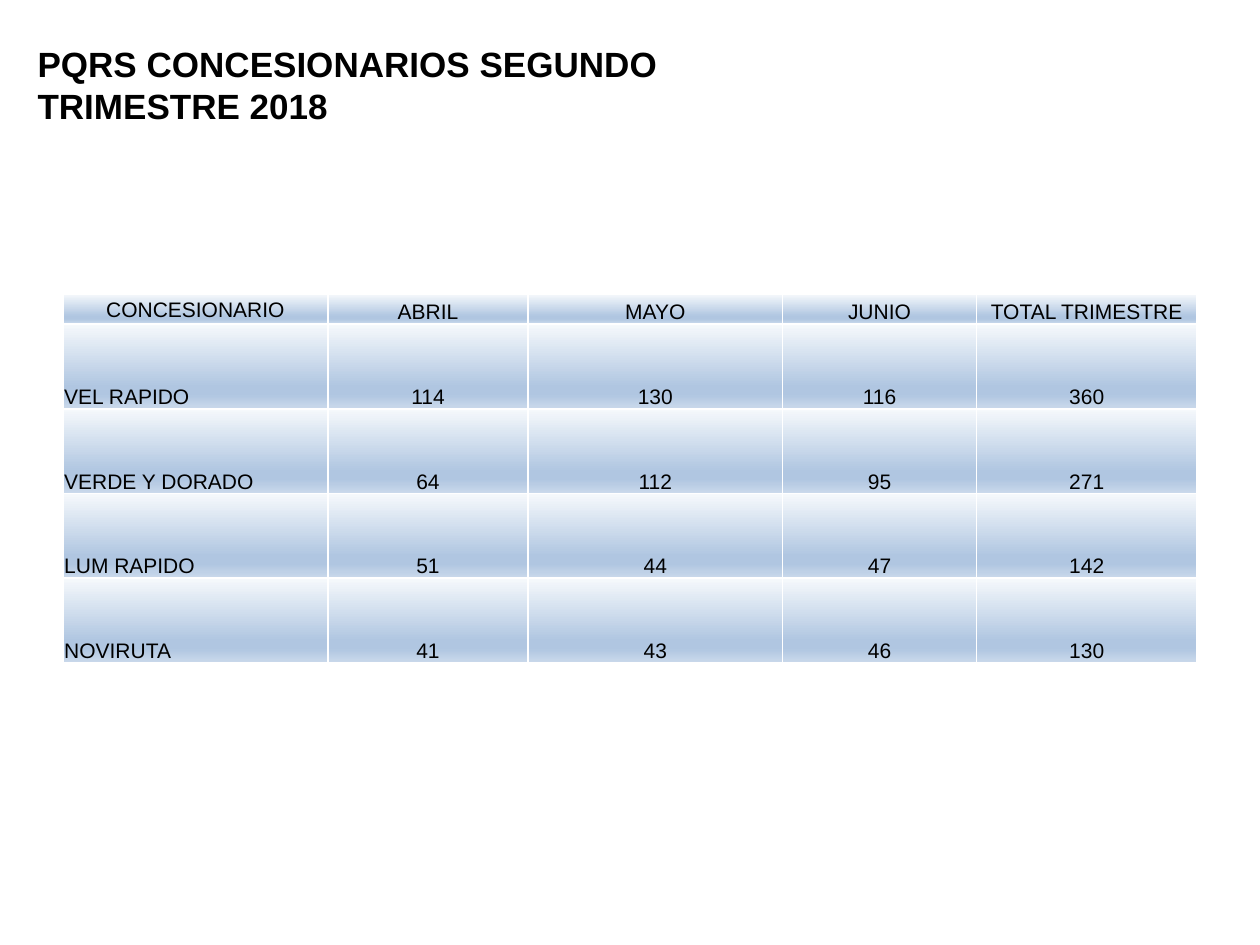
from lxml import etree
from pptx import Presentation
from pptx.dml.color import RGBColor
from pptx.enum.text import MSO_ANCHOR, PP_ALIGN
from pptx.oxml.ns import qn
from pptx.util import Pt

MIDDLE, BOTTOM = MSO_ANCHOR.MIDDLE, MSO_ANCHOR.BOTTOM
LEFT, CENTER = PP_ALIGN.LEFT, PP_ALIGN.CENTER
BLACK = RGBColor(0x00, 0x00, 0x00)
WHITE = RGBColor(0xFF, 0xFF, 0xFF)
PALE = RGBColor(0xF6, 0xF9, 0xFC)
BLUE = RGBColor(0xB0, 0xC6, 0xE1)
SOFT_BLUE = RGBColor(0xCA, 0xD9, 0xEB)
GRADIENT = [(0, PALE), (74, BLUE), (83, BLUE), (100, SOFT_BLUE)]
DOWNWARD = 90

TITLE = "PQRS CONCESIONARIOS SEGUNDO TRIMESTRE 2018"
HEADINGS = ["CONCESIONARIO", "ABRIL", "MAYO", "JUNIO", "TOTAL TRIMESTRE"]
REQUESTS = {
    "VEL RAPIDO": [114, 130, 116],
    "VERDE Y DORADO": [64, 112, 95],
    "LUM RAPIDO": [51, 44, 47],
    "NOVIRUTA": [41, 43, 46],
}
COLUMN_WIDTHS = [151.5, 114.5, 145.5, 111, 126]
HEADING_HEIGHT = 17.2

TITLE_FONT = {"name": "Arial", "size": Pt(20), "bold": True}
CELL_FONT = {"name": "Arial", "size": Pt(12), "bold": False}
TITLE_FRAME = {"word_wrap": True, "vertical_anchor": MIDDLE}
CELL_FORMAT = {
    "margin_left": Pt(0.72),
    "margin_right": Pt(0.72),
    "margin_top": Pt(0.72),
    "margin_bottom": Pt(0),
}


def apply_format(target, values):
    for attribute, value in values.items():
        setattr(target, attribute, value)


def write_text(paragraph, text, font, alignment):
    paragraph.text = text
    paragraph.alignment = alignment
    apply_format(paragraph.font, font)
    paragraph.font.color.rgb = BLACK


def add_solid_color(parent, color):
    return etree.SubElement(parent, qn("a:srgbClr"), val=str(color))


def paint_cell(cell):
    properties = cell._tc.get_or_add_tcPr()
    for edge in ("a:lnL", "a:lnR", "a:lnT", "a:lnB"):
        border = etree.SubElement(properties, qn(edge), w=str(Pt(1)))
        add_solid_color(etree.SubElement(border, qn("a:solidFill")), WHITE)
    gradient = etree.SubElement(properties, qn("a:gradFill"), rotWithShape="1")
    stops = etree.SubElement(gradient, qn("a:gsLst"))
    for position, color in GRADIENT:
        stop = etree.SubElement(stops, qn("a:gs"), pos=str(position * 1000))
        add_solid_color(stop, color)
    etree.SubElement(gradient, qn("a:lin"), ang=str(DOWNWARD * 60000), scaled="0")


def add_title(slide, left, top, width, height):
    title = slide.shapes.add_textbox(Pt(left), Pt(top), Pt(width), Pt(height))
    apply_format(title.text_frame, TITLE_FRAME)
    write_text(title.text_frame.paragraphs[0], TITLE, TITLE_FONT, LEFT)


def add_requests_table(slide, left, top, width, height):
    rows = [HEADINGS]
    for operator, months in REQUESTS.items():
        rows.append([operator, *months, sum(months)])
    table = slide.shapes.add_table(
        len(rows), len(HEADINGS), Pt(left), Pt(top), Pt(width), Pt(height)
    ).table
    apply_format(table, {"first_row": False, "horz_banding": False})

    for column, share in zip(table.columns, COLUMN_WIDTHS):
        column.width = Pt(width * share / sum(COLUMN_WIDTHS))
    operator_height = (height - HEADING_HEIGHT) / len(REQUESTS)
    for row_index, values in enumerate(rows):
        is_heading = row_index == 0
        table.rows[row_index].height = Pt(HEADING_HEIGHT if is_heading else operator_height)
        for column_index, value in enumerate(values):
            is_operator = column_index == 0
            cell = table.cell(row_index, column_index)
            apply_format(cell, CELL_FORMAT)
            cell.vertical_anchor = MIDDLE if is_heading and is_operator else BOTTOM
            alignment = LEFT if is_operator and not is_heading else CENTER
            write_text(cell.text_frame.paragraphs[0], str(value), CELL_FONT, alignment)
            paint_cell(cell)


def main():
    presentation = Presentation()
    apply_format(presentation, {"slide_width": Pt(720), "slide_height": Pt(540)})
    slide = presentation.slides.add_slide(presentation.slide_layouts[6])
    add_title(slide, 14.4, 3, 481.6, 90)
    add_requests_table(slide, 36, 168, 648, 210.8)
    presentation.save("out.pptx")


if __name__ == "__main__":
    main()
